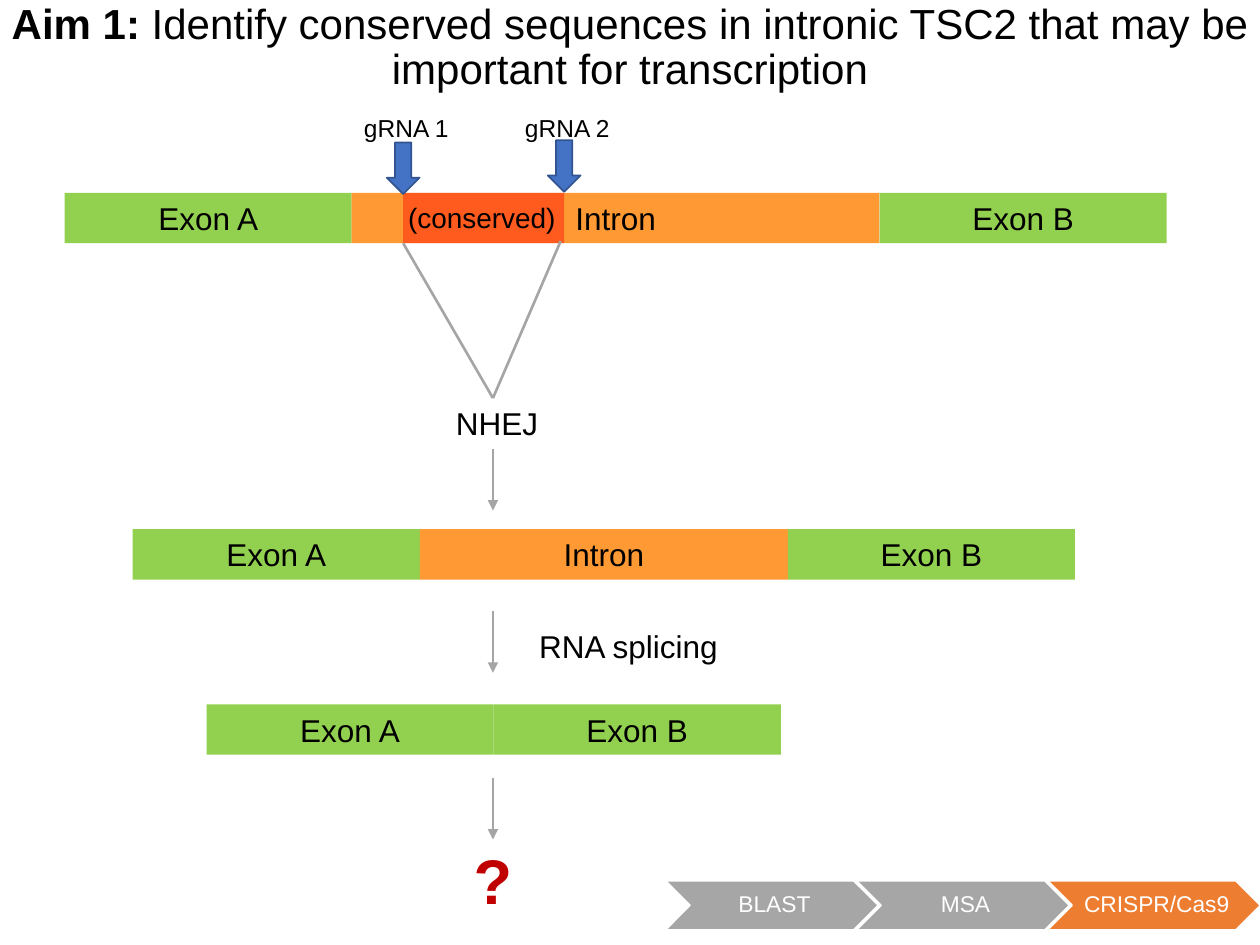
from dataclasses import dataclass

from lxml.etree import SubElement
from pptx import Presentation
from pptx.dml.color import RGBColor
from pptx.enum.shapes import MSO_CONNECTOR as CONNECTOR, MSO_SHAPE as SHAPE
from pptx.enum.text import MSO_ANCHOR as ANCHOR, PP_ALIGN as ALIGN
from pptx.oxml.ns import qn
from pptx.util import Pt


@dataclass(frozen=True)
class Theme:
    font: str = "Arial"
    text: str = "000000"
    exon: str = "92D050"
    intron: str = "FF9933"
    conserved: str = "FF0000"
    guide: str = "4472C4"
    guide_edge: str = "325491"
    line: str = "A5A5A5"
    step: str = "A6A6A6"
    active_step: str = "ED7D31"
    white: str = "FFFFFF"
    question: str = "C00000"
    title_size: float = 24
    label_size: float = 18
    conserved_size: float = 16
    guide_size: float = 14
    step_size: float = 13
    question_size: float = 36


class Painter:
    def __init__(self, slide, theme):
        self.shapes = slide.shapes
        self.theme = theme

    def style(self, paragraph, size, color=None, bold=False):
        for run in paragraph.runs:
            run.font.name = self.theme.font
            run.font.size = Pt(size)
            run.font.bold = bold
            run.font.color.rgb = RGBColor.from_string(color or self.theme.text)

    def shape(self, kind, left, top, width, height, fill, edge=None, opacity=None):
        shape = self.shapes.add_shape(kind, Pt(left), Pt(top), Pt(width), Pt(height))
        shape.shadow.inherit = False
        shape.fill.solid()
        shape.fill.fore_color.rgb = RGBColor.from_string(fill)
        if opacity is not None:
            color = shape.fill._xPr.find(f"{qn('a:solidFill')}/{qn('a:srgbClr')}")
            SubElement(color, qn("a:alpha")).set("val", str(opacity * 1000))
        if edge:
            shape.line.color.rgb = RGBColor.from_string(edge)
            shape.line.width = Pt(1)
        else:
            shape.line.fill.background()
        return shape

    def segment(self, left, top, width, name, fill):
        """Draw one labelled stretch of a gene."""
        bar = self.shape(SHAPE.RECTANGLE, left, top, width, BAR_HEIGHT, fill)
        bar.text_frame.text = name
        paragraph = bar.text_frame.paragraphs[0]
        paragraph.alignment = ALIGN.CENTER
        self.style(paragraph, self.theme.label_size)

    def gene(self, left, top, intron_width=0):
        """Draw exon A, the intron if it is still there, and exon B."""
        segments = [("Exon A", EXON_WIDTH, self.theme.exon),
                    ("Intron", intron_width, self.theme.intron),
                    ("Exon B", EXON_WIDTH, self.theme.exon)]
        for name, width, fill in segments:
            if width:
                self.segment(left, top, width, name, fill)
                left += width

    def label(self, text, left, top, width, height, size, color=None, bold=False, wrap=True):
        box = self.shapes.add_textbox(Pt(left), Pt(top), Pt(width), Pt(height))
        box.text_frame.word_wrap = wrap
        box.text_frame.text = text
        self.style(box.text_frame.paragraphs[0], size, color, bold)
        return box.text_frame

    def title(self, lead, rest):
        frame = self.label(lead, -3.6, 0, 727.2, 55.4, self.theme.title_size)
        frame.vertical_anchor = ANCHOR.MIDDLE
        paragraph = frame.paragraphs[0]
        paragraph.alignment = ALIGN.CENTER
        paragraph.line_spacing = 0.9
        paragraph.add_run().text = rest
        self.style(paragraph, self.theme.title_size)
        paragraph.runs[0].font.bold = True

    def guide(self, name, tip_x, tip_y):
        """Draw a guide RNA label with its arrow pointing at the cut."""
        width, height = 18.7, 29.5
        self.shape(SHAPE.DOWN_ARROW, tip_x - width / 2, tip_y - height, width, height,
                   self.theme.guide, self.theme.guide_edge)
        self.label(name, tip_x - 29.5, 61.2, 68.4, 24.5, self.theme.guide_size)

    def line(self, start, end, arrow=False):
        line = self.shapes.add_connector(CONNECTOR.STRAIGHT, *map(Pt, start + end))
        line.line.color.rgb = RGBColor.from_string(self.theme.line)
        line.line.width = Pt(1.5)
        if arrow:
            SubElement(line.line._get_or_add_ln(), qn("a:tailEnd")).set("type", "triangle")
        SubElement(line._element.spPr, qn("a:effectLst"))

    def step(self, name, left, fill):
        chevron = self.shape(SHAPE.CHEVRON, left, 503.3, 121.7, 28.1, fill, self.theme.white)
        frame = chevron.text_frame
        frame.margin_left = Pt(4.3)
        frame.margin_top = frame.margin_right = frame.margin_bottom = Pt(1.4)
        frame.vertical_anchor = ANCHOR.MIDDLE
        frame.text = name
        paragraph = frame.paragraphs[0]
        paragraph.alignment = ALIGN.CENTER
        paragraph.line_spacing = 0.9
        self.style(paragraph, self.theme.step_size, self.theme.white)


EXON_WIDTH, BAR_HEIGHT = 164.1, 28.8
GENE_TOP = 110.2
GENE_BOTTOM = GENE_TOP + BAR_HEIGHT
CUT_1, CUT_2 = 230.4, 322.4
FLOW_X = 281.7
ARROW_LENGTH = 35.3


def main():
    prs = Presentation()
    prs.slide_width, prs.slide_height = Pt(720), Pt(540)
    theme = Theme()
    painter = Painter(prs.slides.add_slide(prs.slide_layouts[6]), theme)

    for index, name in enumerate(["BLAST", "MSA", "CRISPR/Cas9"]):
        fill = theme.active_step if name == "CRISPR/Cas9" else theme.step
        painter.step(name, 380.2 + 109.2 * index, fill)

    painter.title("Aim 1: ", "Identify conserved sequences in intronic TSC2 "
                             "that may be important for transcription")

    painter.gene(36.9, GENE_TOP, intron_width=301.6)
    painter.shape(SHAPE.RECTANGLE, CUT_1, GENE_TOP, CUT_2 - CUT_1, BAR_HEIGHT,
                  theme.conserved, opacity=40)
    painter.label("(conserved)", 226.1, 110.9, 123.8, 26.6, theme.conserved_size)
    painter.guide("gRNA 1", CUT_1, 110.9)
    painter.guide("gRNA 2", CUT_2, 109.6)

    joint = (FLOW_X, 227.5)
    painter.line((CUT_1, GENE_BOTTOM), joint)
    painter.line((320.4, 137.8), joint)
    painter.label("NHEJ", 253.4, 227.5, 78.5, 28.8, theme.label_size)

    painter.gene(75.8, 302.4, intron_width=210.3)
    painter.label("RNA splicing", 301, 355, 117.4, 28.8, theme.label_size, wrap=False)
    painter.gene(118, 402.5)
    for top in (256.4, 349.2, 444.4):
        painter.line((FLOW_X, top), (FLOW_X, top + ARROW_LENGTH), arrow=True)
    painter.label("?", 263.5, 477.4, 37.4, 51.1, theme.question_size,
                  theme.question, bold=True, wrap=False)

    prs.save("out.pptx")


if __name__ == "__main__":
    main()
